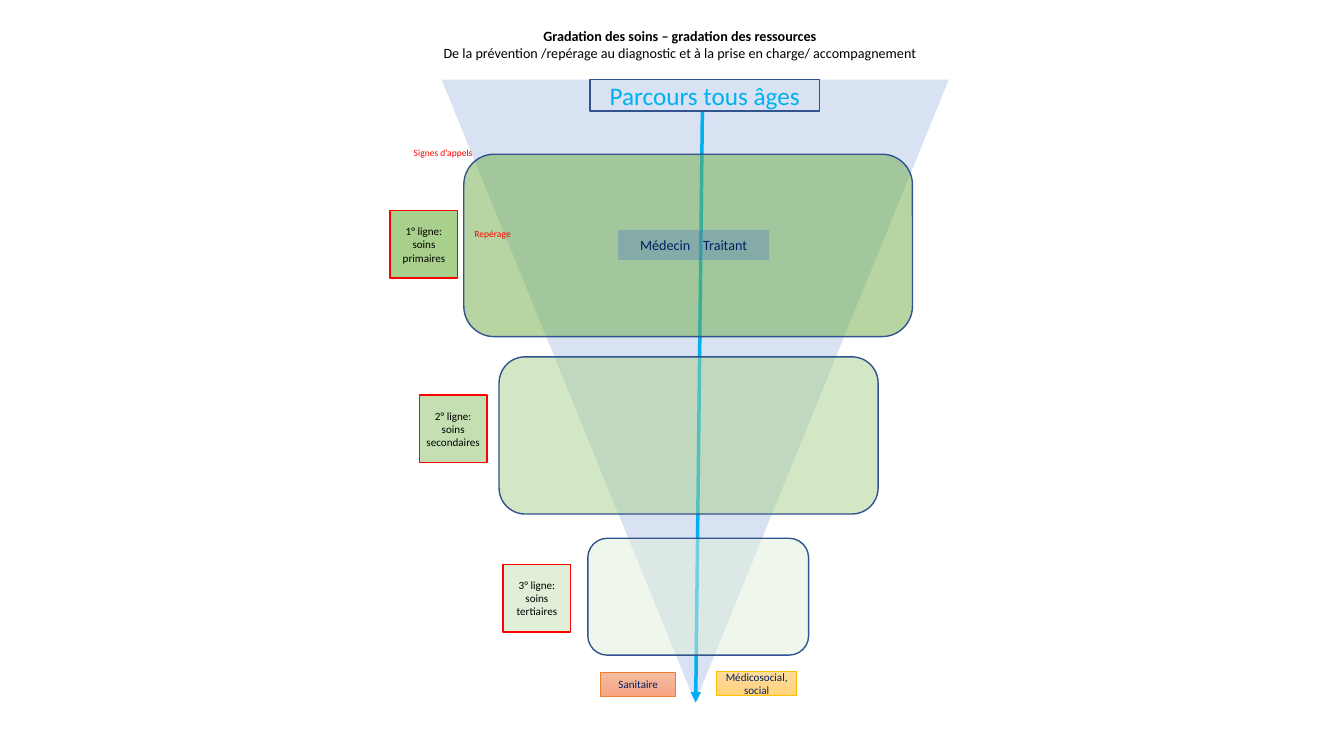
from copy import deepcopy
from dataclasses import dataclass

from lxml import etree
from pptx import Presentation
from pptx.dml.color import RGBColor
from pptx.enum.shapes import MSO_CONNECTOR, MSO_SHAPE
from pptx.enum.text import MSO_ANCHOR, MSO_AUTO_SIZE, PP_ALIGN
from pptx.oxml.ns import qn
from pptx.util import Inches, Pt

RECT, ROUND = MSO_SHAPE.RECTANGLE, MSO_SHAPE.ROUNDED_RECTANGLE
TRIANGLE = MSO_SHAPE.ISOSCELES_TRIANGLE
STRAIGHT = MSO_CONNECTOR.STRAIGHT
CENTER = PP_ALIGN.CENTER
TOP, MIDDLE = MSO_ANCHOR.TOP, MSO_ANCHOR.MIDDLE
FIXED = MSO_AUTO_SIZE.NONE
TITLE_ONLY = 5
CELL = 0.1  # side of a grid square, in inches


@dataclass(frozen=True)
class Theme:
    font: str = "Calibri"
    banner: float = 18
    heading: float = 10.1
    label: float = 7.9
    note: float = 6.8
    black: str = "000000"
    red: str = "FF0000"
    navy: str = "002060"
    outline: str = "31538F"
    arrow: str = "00B0F0"
    funnel: str = "D8E2F3"
    doctor: str = "4472C4"
    tiers: tuple = ("70AD47", "A8D08C", "E1EFD8")
    labels: tuple = ("A8D08C", "C4E0B2", "E1EFD8")
    health: tuple = ("F7BCA2", "F4B093", "F7A47F")
    health_line: str = "ED7D31"
    social: tuple = ("FFDC9B", "FFD68D", "FFD478")
    social_line: str = "FFC000"


def grid(*cells):
    """Turn columns and rows into slide lengths."""
    return [Inches(c * CELL) for c in cells]


def rgb(code):
    return RGBColor.from_string(code)


class Board:
    """Holds the theme and the slide being drawn."""

    def __init__(self, slide, theme):
        self.slide, self.theme = slide, theme

    def put_text(self, sp, lines, size, color, anchor=MIDDLE):
        """Fill a shape with centred lines, each a list of runs."""
        tf = sp.text_frame
        tf.word_wrap = True
        tf.auto_size = FIXED
        tf.vertical_anchor = anchor
        tf.margin_left = tf.margin_right = Inches(0.06)
        tf.margin_top = tf.margin_bottom = Inches(0.03)
        for i, line in enumerate(lines):
            p = tf.add_paragraph() if i else tf.paragraphs[0]
            p.alignment, p.line_spacing, p.space_before = CENTER, 1.0, Pt(0)
            p.font.name, p.font.size = self.theme.font, Pt(size)
            p.font.color.rgb = rgb(color)
            for text in line:
                p.add_run().text = text
        return tf

    def title(self, at, heading, subheading):
        sp = self.slide.shapes.title
        sp.left, sp.top, sp.width, sp.height = grid(*at)
        tf = self.put_text(sp, [[heading], [subheading]], self.theme.heading,
                           self.theme.black, TOP)
        tf.paragraphs[0].font.bold = True
        tf.paragraphs[1].font.bold = False

    def shape(self, kind, at, fill, line=None, width=1, alpha=None):
        """Draw a preset shape; a tuple of fills makes a downward gradient."""
        sp = self.slide.shapes.add_shape(kind, *grid(*at))
        sp.shadow.inherit = False
        if isinstance(fill, tuple):
            self.shade(sp, fill)
        else:
            sp.fill.solid()
            sp.fill.fore_color.rgb = rgb(fill)
        if alpha:
            color = sp._element.spPr.find(qn("a:solidFill"))[0]
            etree.SubElement(color, qn("a:alpha")).set("val", str(alpha * 1000))
        if line:
            sp.line.color.rgb = rgb(line)
            sp.line.width = Pt(width)
        else:
            sp.line.fill.background()
        return sp

    def shade(self, sp, colors):
        sp.fill.gradient()
        sp.fill.gradient_angle = 270
        stops = next(sp._element.spPr.iter(qn("a:gsLst")))
        stops.append(deepcopy(stops[0]))
        for i, (stop, color) in enumerate(zip(sp.fill.gradient_stops, colors)):
            stop.position = i / (len(colors) - 1)
            stop.color.rgb = rgb(color)

    def box(self, at, runs, size, color, fill, **style):
        sp = self.shape(RECT, at, fill, **style)
        return self.put_text(sp, [runs], size, color)

    def note(self, at, text):
        sp = self.slide.shapes.add_textbox(*grid(*at))
        self.put_text(sp, [[text]], self.theme.note, self.theme.red)

    def arrow(self, ends, color, width):
        cx = self.slide.shapes.add_connector(STRAIGHT, *grid(*ends))
        cx.line.color.rgb = rgb(color)
        cx.line.width = Pt(width)
        props = cx._element.spPr
        etree.SubElement(props.find(qn("a:ln")), qn("a:tailEnd")).set("type", "triangle")
        etree.SubElement(props, qn("a:effectLst"))


def main():
    prs = Presentation()
    prs.slide_width, prs.slide_height = Inches(13.33), Inches(7.5)
    t = Theme()
    board = Board(prs.slides.add_slide(prs.slide_layouts[TITLE_ONLY]), t)

    board.title((42.3, 2.4, 50.3, 4),
                "Gradation des soins – gradation des ressources",
                "De la prévention /repérage au diagnostic et à la prise en charge/ accompagnement")

    funnel = board.shape(TRIANGLE, (43.8, 7.9, 50.3, 61.8), t.funnel)
    funnel.rotation = 180
    board.arrow((69.7, 7.9, 69, 69.7), t.arrow, 2.5)
    board.box((58.5, 7.9, 22.8, 3.1), ["Parcours tous âges"], t.banner, t.arrow,
              t.funnel, line=t.outline)

    tiers = [
        ((46, 15.3, 44.5, 18.1), (38.7, 20.9), "1° ligne: soins primaires"),
        ((49.5, 35.4, 37.6, 15.6), (41.6, 39.2), "2° ligne: soins secondaires"),
        ((58.3, 53.4, 21.9, 11.6), (49.9, 56), "3° ligne: soins tertiaires"),
    ]
    for (at, corner, text), fill, label in zip(tiers, t.tiers, t.labels):
        board.shape(ROUND, at, fill, t.outline, alpha=50)
        board.box((*corner, 6.7, 6.7), [text], t.label, t.black, label, line=t.red)

    doctor = board.box((61.3, 22.8, 15, 3), ["Médecin", " ", "Traitant"],
                       t.heading, t.navy, t.doctor, alpha=32)
    gap = doctor.paragraphs[0].runs[1]
    gap._r.get_or_add_rPr().set("spc", "690")

    board.box((59.6, 66.7, 7.4, 2.4), ["Sanitaire"], t.label, t.navy,
              t.health, line=t.health_line, width=0.75)
    board.box((71.1, 66.6, 7.9, 2.4), ["Médicosocial, social"], t.label, t.navy,
              t.social, line=t.social_line, width=0.75)

    board.note((39, 14.5, 9.9, 1.3), "Signes d’appels")
    board.note((43.9, 22.5, 9.9, 1.3), "Repérage")

    prs.save("out.pptx")


if __name__ == "__main__":
    main()
